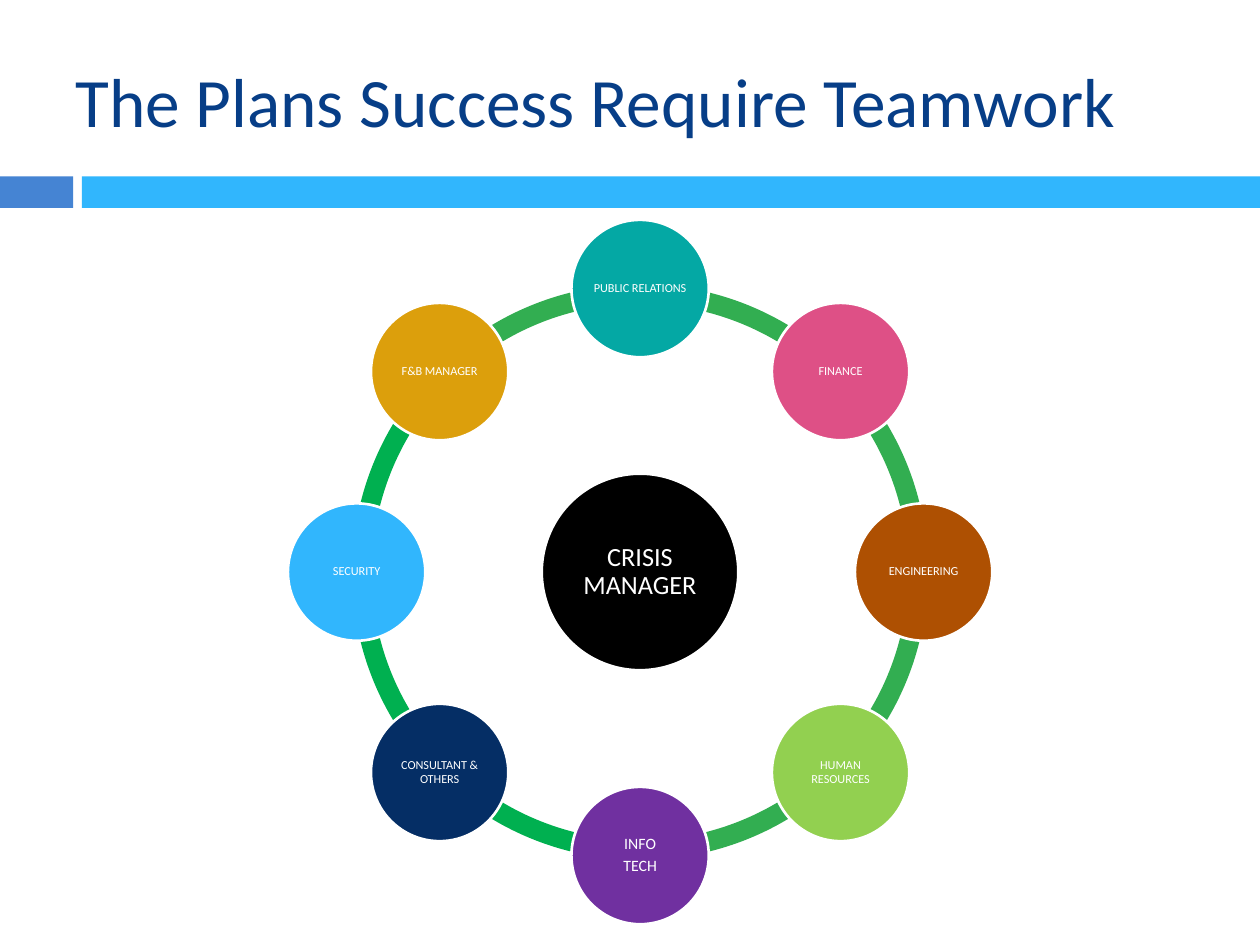
from dataclasses import dataclass
from math import cos, radians, sin

from pptx import Presentation
from pptx.dml.color import RGBColor
from pptx.enum.shapes import MSO_SHAPE as Preset
from pptx.enum.text import MSO_ANCHOR as Anchor, PP_ALIGN as Align
from pptx.util import Inches, Pt


@dataclass(frozen=True)
class Theme:
    font: str = "Calibri"
    title_size: float = 39.6
    manager_size: float = 15
    info_size: float = 9
    role_size: float = 7
    title: str = "073E87"
    accent: str = "4584D3"
    sky: str = "31B6FD"
    white: str = "FFFFFF"
    black: str = "000000"
    soft_green: str = "32AE51"
    strong_green: str = "00B050"


@dataclass(frozen=True)
class Box:
    left: float
    top: float
    width: float
    height: float

    def inches(self) -> tuple:
        return tuple(Inches(n) for n in (self.left, self.top, self.width, self.height))


@dataclass(frozen=True)
class Role:
    label: str
    fill: str
    next_arc: str
    size: float


THEME = Theme()
CENTER_X, CENTER_Y = 5.08, 4.54
ORBIT = 2.25
RING_DIAMETER = 4.57
ROLE_DIAMETER = 1.09
MANAGER_DIAMETER = 1.56
RING_THICKNESS = 0.034
FULL_TURN = 216
TOP_ANGLE = 162

SOFT, STRONG, SMALL = THEME.soft_green, THEME.strong_green, THEME.role_size
ROLES = [
    Role("PUBLIC RELATIONS", "04A8A4", SOFT, SMALL),
    Role("FINANCE", "DE5086", SOFT, SMALL),
    Role("ENGINEERING", "AE5002", SOFT, SMALL),
    Role("HUMAN RESOURCES", "92D050", SOFT, SMALL),
    Role("INFO\nTECH", "7030A0", STRONG, THEME.info_size),
    Role("CONSULTANT & OTHERS", "052E65", STRONG, SMALL),
    Role("SECURITY", THEME.sky, STRONG, SMALL),
    Role("F&B MANAGER", "DC9F0C", SOFT, SMALL),
]


def centered(x: float, y: float, diameter: float) -> Box:
    return Box(x - diameter / 2, y - diameter / 2, diameter, diameter)


def apply_format(target, values: dict) -> None:
    for name, value in values.items():
        setattr(target, name, value)


def write(frame, text: str, size: float, color: str, paragraph_format: dict) -> None:
    apply_format(frame, {"text": text, "word_wrap": True, "vertical_anchor": Anchor.MIDDLE})
    for paragraph in frame.paragraphs:
        apply_format(paragraph, paragraph_format)
        for run in paragraph.runs:
            apply_format(run.font, {"name": THEME.font, "size": Pt(size)})
            run.font.color.rgb = RGBColor.from_string(color)


def draw_shape(slide, preset, box: Box, fill: str):
    shape = slide.shapes.add_shape(preset, *box.inches())
    shape.shadow.inherit = False
    shape.fill.solid()
    shape.fill.fore_color.rgb = RGBColor.from_string(fill)
    shape.line.fill.background()
    return shape


def draw_circle(slide, box: Box, fill: str, label: str, size: float, inset: float) -> None:
    circle = draw_shape(slide, Preset.OVAL, box, fill)
    circle.line.color.rgb = RGBColor.from_string(THEME.white)
    circle.line.width = Pt(1.5)
    margins = ("margin_left", "margin_top", "margin_right", "margin_bottom")
    apply_format(circle.text_frame, dict.fromkeys(margins, Inches(inset)))
    write(circle.text_frame, label, size, THEME.white, {
        "alignment": Align.CENTER,
        "line_spacing": 0.9,
        "space_after": Pt(size * 0.35),
    })


def draw_arc(slide, position: int, color: str) -> None:
    step = FULL_TURN / len(ROLES)
    start = (TOP_ANGLE + position * step) % FULL_TURN
    arc = draw_shape(slide, Preset.BLOCK_ARC, centered(CENTER_X, CENTER_Y, RING_DIAMETER), color)
    for index, value in enumerate((start, (start + step) % FULL_TURN, RING_THICKNESS)):
        arc.adjustments[index] = value


def draw_role(slide, position: int, role: Role) -> None:
    angle = radians(position * 360 / len(ROLES) - 90)
    x, y = CENTER_X + ORBIT * cos(angle), CENTER_Y + ORBIT * sin(angle)
    draw_circle(slide, centered(x, y, ROLE_DIAMETER), role.fill, role.label, role.size, 0.01)


def draw_header(slide) -> None:
    draw_shape(slide, Preset.RECTANGLE, Box(0, 1.4, 0.58, 0.25), THEME.accent)
    draw_shape(slide, Preset.RECTANGLE, Box(0.65, 1.4, 9.35, 0.25), THEME.sky)
    heading = slide.shapes.add_textbox(*Box(0.5, 0.25, 9.25, 1.08).inches())
    write(heading.text_frame, "The Plans Success Require Teamwork", THEME.title_size,
          THEME.title, {"alignment": Align.LEFT})


def main() -> None:
    deck = Presentation()
    apply_format(deck, {"slide_width": Inches(10), "slide_height": Inches(7.5)})
    slide = deck.slides.add_slide(deck.slide_layouts[6])
    draw_header(slide)
    for position, role in reversed(list(enumerate(ROLES))):
        draw_arc(slide, position, role.next_arc)
    draw_circle(slide, centered(CENTER_X, CENTER_Y, MANAGER_DIAMETER), THEME.black,
                "CRISIS MANAGER", THEME.manager_size, 0.02)
    for position, role in enumerate(ROLES):
        draw_role(slide, position, role)
    deck.save("out.pptx")


if __name__ == "__main__":
    main()
